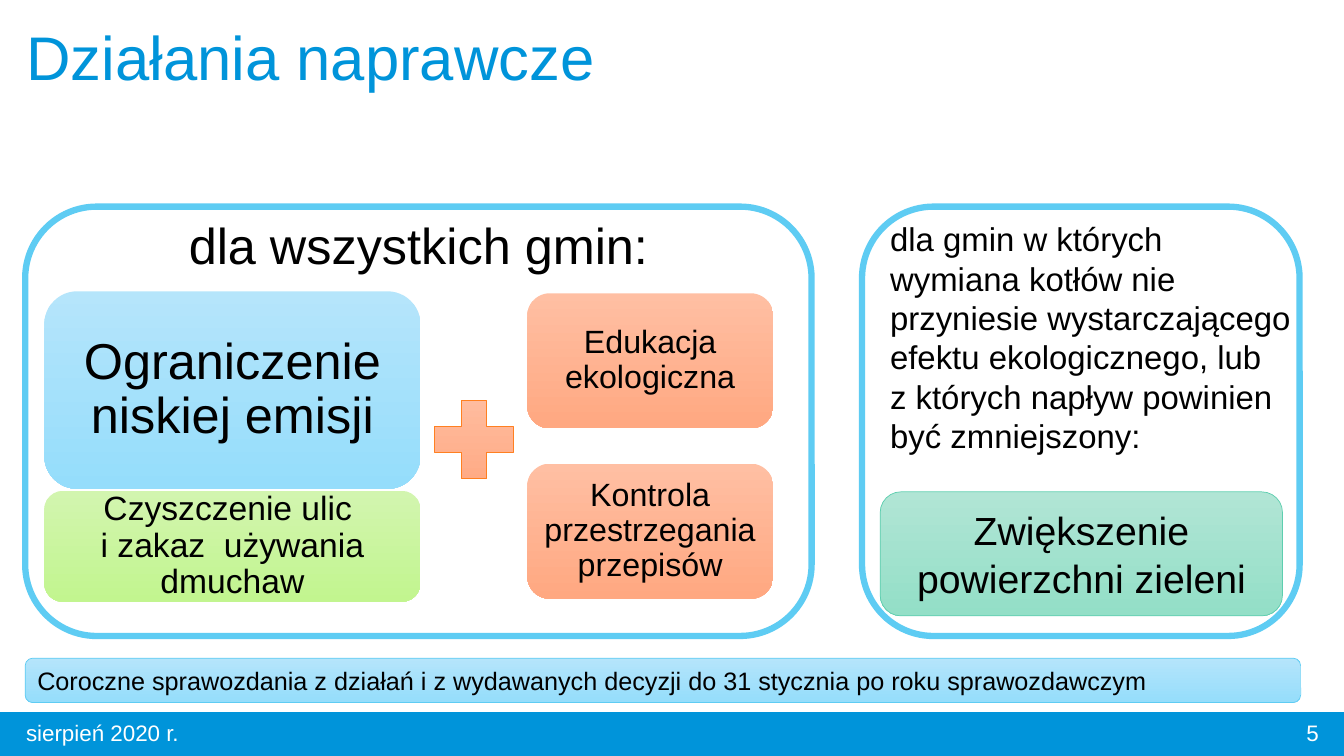
import pptx
import pptx.util
import pptx.dml.color
import pptx.enum.shapes
import pptx.enum.text

Inches = pptx.util.Inches
SHAPES = pptx.enum.shapes.MSO_SHAPE
ALIGN = pptx.enum.text.PP_ALIGN
ANCHOR = pptx.enum.text.MSO_ANCHOR

BLUE, SKY, WHITE, BLACK = "0094DA", "5ECCF3", "FFFFFF", "000000"
ORANGE_FADE = ("FFBFA3", "FFA881")
BLUE_FADE = ("B5E5FB", "95DDFB")
GREEN_FADE = ("D2F5AF", "C2F58F")
TEAL_FADE = ("B1E5D5", "93DFC7")

TITLE = "Działania naprawcze"
FOOTER_BAR = (0, 7.07, 13.33, 0.43)
PANELS = [(8.55, 2.05, 4.34, 4.26), (0.25, 2.05, 7.8, 4.26)]
PLUS = (4.17, 3.83, 1.06, 1.06)

CARDS = [
    {"box": (5.23, 2.91, 2.44, 1.34), "fade": ORANGE_FADE, "size": 23, "margin": 0.1,
     "text": "Edukacja ekologiczna"},
    {"box": (5.23, 4.6, 2.44, 1.34), "fade": ORANGE_FADE, "size": 23, "margin": 0.1,
     "text": "Kontrola przestrzegania przepisów"},
    {"box": (0.44, 2.89, 3.73, 1.96), "fade": BLUE_FADE, "size": 36, "margin": 0.15,
     "text": "Ograniczenie niskiej emisji"},
    {"box": (0.44, 4.87, 3.73, 1.1), "fade": GREEN_FADE, "size": 24, "margin": 0.1,
     "text": "Czyszczenie ulic \ni zakaz  używania dmuchaw"},
]
BARS = [
    {"box": (8.73, 4.88, 3.99, 1.23), "fade": TEAL_FADE, "line": "5DCEAF", "size": 28,
     "align": ALIGN.CENTER, "text": "Zwiększenie powierzchni zieleni"},
    {"box": (0.25, 6.53, 12.65, 0.44), "fade": BLUE_FADE, "line": SKY, "size": 18,
     "align": ALIGN.LEFT,
     "text": "Coroczne sprawozdania z działań i z wydawanych decyzji "
             "do 31 stycznia po roku sprawozdawczym"},
]
LABELS = [
    {"box": (0.44, 2.07, 7.42, 0.71), "lines": ["dla wszystkich gmin:"], "size": 36,
     "align": ALIGN.CENTER},
    {"box": (8.73, 2.12, 4.26, 2.47), "size": 23.5,
     "lines": ["dla gmin w których wymiana kotłów nie przyniesie wystarczającego "
               "efektu ekologicznego, lub",
               "z których napływ powinien być zmniejszony:"]},
    {"box": (0.16, 7.07, 4, 0.4), "lines": ["sierpień 2020 r."], "size": 16,
     "color": WHITE, "anchor": ANCHOR.MIDDLE},
    {"box": (10.18, 7.07, 3, 0.4), "lines": ["5"], "size": 16,
     "color": WHITE, "anchor": ANCHOR.MIDDLE, "align": ALIGN.RIGHT},
]


def rgb(value):
    return pptx.dml.color.RGBColor.from_string(value)


def apply(target, values):
    for name, value in values.items():
        setattr(target, name, value)


def lengths(box):
    return [Inches(value) for value in box]


def write(shape, lines, size, color=BLACK, align=ALIGN.LEFT, anchor=ANCHOR.TOP,
          spacing=1.0, margins=(0.1, 0.05)):
    across, down = lengths(margins)
    frame = shape.text_frame
    apply(frame, {"word_wrap": True, "vertical_anchor": anchor,
                  "auto_size": pptx.enum.text.MSO_AUTO_SIZE.NONE,
                  "margin_left": across, "margin_right": across,
                  "margin_top": down, "margin_bottom": down})
    for index, line in enumerate(lines):
        paragraph = frame.add_paragraph() if index else frame.paragraphs[0]
        apply(paragraph, {"text": line, "alignment": align, "line_spacing": spacing,
                          "space_before": pptx.util.Pt(0)})
        apply(paragraph.font, {"name": "Arial", "size": pptx.util.Pt(size)})
        paragraph.font.color.rgb = rgb(color)


def draw(slide, kind, box, fill, line=None, width=0.5):
    shape = slide.shapes.add_shape(kind, *lengths(box))
    shape.shadow.inherit = False
    if isinstance(fill, tuple):
        shape.fill.gradient()
        shape.fill.gradient_angle = 270
        for stop, color in zip(shape.fill.gradient_stops, fill):
            stop.color.rgb = rgb(color)
    else:
        shape.fill.solid()
        shape.fill.fore_color.rgb = rgb(fill)
    if line:
        shape.line.color.rgb = rgb(line)
        shape.line.width = pptx.util.Pt(width)
    else:
        shape.line.fill.background()
    return shape


def main():
    presentation = pptx.Presentation()
    apply(presentation, {"slide_width": Inches(13.33), "slide_height": Inches(7.5)})
    slide = presentation.slides.add_slide(presentation.slide_layouts[5])

    title = slide.shapes.title
    apply(title, dict(zip(("left", "top", "width", "height"),
                          lengths((0.16, 0.22, 10.3, 1.5)))))
    write(title, [TITLE], 44, BLUE, spacing=0.9)

    draw(slide, SHAPES.RECTANGLE, FOOTER_BAR, BLUE, BLUE, 1)
    for box in PANELS:
        draw(slide, SHAPES.ROUNDED_RECTANGLE, box, WHITE, SKY, 4.5)
    draw(slide, SHAPES.MATH_PLUS, PLUS, ORANGE_FADE, "FF8021")

    for card in CARDS:
        shape = draw(slide, SHAPES.ROUNDED_RECTANGLE, card["box"], card["fade"])
        write(shape, [card["text"]], card["size"], align=ALIGN.CENTER,
              anchor=ANCHOR.MIDDLE, spacing=0.9, margins=(card["margin"],) * 2)
    for bar in BARS:
        shape = draw(slide, SHAPES.ROUNDED_RECTANGLE, bar["box"], bar["fade"], bar["line"])
        write(shape, [bar["text"]], bar["size"], align=bar["align"], anchor=ANCHOR.MIDDLE)
    for label in LABELS:
        settings = {name: value for name, value in label.items() if name != "box"}
        write(slide.shapes.add_textbox(*lengths(label["box"])), **settings)

    presentation.save("out.pptx")


if __name__ == "__main__":
    main()
